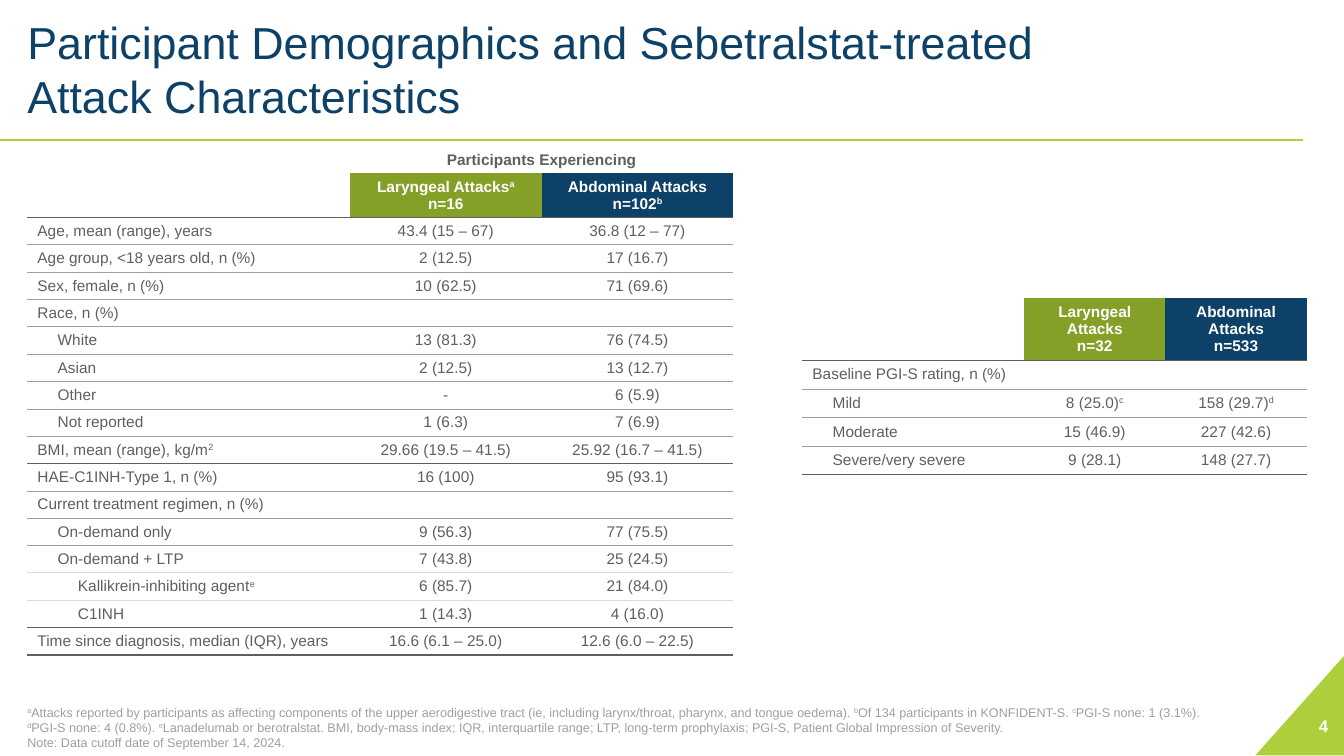
from lxml import etree
from pptx import Presentation
from pptx import util as u
from pptx.dml.color import RGBColor
from pptx.enum import shapes, text
from pptx.oxml import ns

COLOURS = {"navy": "0D4167", "olive": "84A027", "lime": "ADCF3B", "white": "FFFFFF",
           "body": "5F5F5F", "grey": "9F9F9F", "pale": "D9D9D9"}
# Row rules: colour and width in points
RULES = {"thin": ("grey", 0.5), "pale": ("pale", 1), "dark": ("body", 1)}
FONT = "Arial"
NO_GRID_STYLE = "{2D5ABB26-0587-4C30-8999-92F81FD0307C}"
TABLE_SIZE = 11
INDENT = 0.51
LEFT = 0.69

TITLE = "Participant Demographics and Sebetralstat-treated\vAttack Characteristics"
# Text between carets is superscript
FOOTNOTE = (
    "^a^Attacks reported by participants as affecting components of the upper aerodigestive tract "
    "(ie, including larynx/throat, pharynx, and tongue oedema). ^b^Of 134 participants in "
    "KONFIDENT-S. ^c^PGI-S none: 1 (3.1%). \v^d^PGI-S none: 4 (0.8%). ^e^Lanadelumab or "
    "berotralstat. BMI, body-mass index; IQR, interquartile range; LTP, long-term prophylaxis; "
    "PGI-S, Patient Global Impression of Severity.\vNote: Data cutoff date of September 14, 2024.")

# Indent level, label, laryngeal, abdominal, rule below
DEMOGRAPHICS = [
    (0, "Age, mean (range), years", "43.4 (15 – 67)", "36.8 (12 – 77)", "thin"),
    (0, "Age group, <18 years old, n (%)", "2 (12.5)", "17 (16.7)", "thin"),
    (0, "Sex, female, n (%)", "10 (62.5)", "71 (69.6)", "thin"),
    (0, "Race, n (%)", "", "", "thin"),
    (1, "White", "13 (81.3)", "76 (74.5)", "thin"),
    (1, "Asian", "2 (12.5)", "13 (12.7)", "thin"),
    (1, "Other", "-", "6 (5.9)", "thin"),
    (1, "Not reported", "1 (6.3)", "7 (6.9)", "thin"),
    (0, "BMI, mean (range), kg/m^2^", "29.66 (19.5 – 41.5)", "25.92 (16.7 – 41.5)", "dark"),
    (0, "HAE-C1INH-Type 1, n (%)", "16 (100)", "95 (93.1)", "thin"),
    (0, "Current treatment regimen, n (%)", "", "", "thin"),
    (1, "On-demand only", "9 (56.3)", "77 (75.5)", "thin"),
    (1, "On-demand + LTP", "7 (43.8)", "25 (24.5)", "pale"),
    (2, "Kallikrein-inhibiting agent^e^", "6 (85.7)", "21 (84.0)", "pale"),
    (2, "C1INH", "1 (14.3)", "4 (16.0)", "dark"),
    (0, "Time since diagnosis, median (IQR), years", "16.6 (6.1 – 25.0)",
     "12.6 (6.0 – 22.5)", "dark"),
]
SEVERITY = [
    (0, "Baseline PGI-S rating, n (%)", "", "", "thin"),
    (1, "Mild", "8 (25.0)^c^", "158 (29.7)^d^", "thin"),
    (1, "Moderate", "15 (46.9)", "227 (42.6)", "thin"),
    (1, "Severe/very severe", "9 (28.1)", "148 (27.7)", "dark"),
]


def rgb(name):
    return RGBColor.from_string(COLOURS[name])


def add_spans(para, words, size, colour, bold=False):
    for index, part in enumerate(words.split("^")):
        for number, line in enumerate(part.split("\v")):
            if number:
                para.add_line_break()
            if not line:
                continue
            span = para.add_run()
            span.text = line
            span.font.name = FONT
            span.font.size = u.Pt(size)
            span.font.bold = bold
            span.font.color.rgb = rgb(colour)
            if index % 2:
                span.font._element.set("baseline", "30000")


def add_text(page, place, words, size, colour, anchor, bold=False, align=text.PP_ALIGN.LEFT):
    box = page.shapes.add_textbox(*map(u.Cm, place))
    frame = box.text_frame
    frame.word_wrap = True
    frame.vertical_anchor = anchor
    frame.margin_left = frame.margin_right = frame.margin_top = frame.margin_bottom = 0
    frame.paragraphs[0].alignment = align
    add_spans(frame.paragraphs[0], words, size, colour, bold)


def add_rule(page, x1, x2, y):
    line = page.shapes.add_connector(shapes.MSO_CONNECTOR.STRAIGHT,
                                     u.Cm(x1), u.Cm(y), u.Cm(x2), u.Cm(y))
    line.line.color.rgb = rgb("lime")
    line.line.width = u.Pt(2)
    etree.SubElement(line._element.spPr, ns.qn("a:effectLst"))


def add_corner(page):
    corner = page.shapes.add_shape(shapes.MSO_SHAPE.RIGHT_TRIANGLE,
                                   u.Cm(31.5), u.Cm(16.66), u.Cm(2.51), u.Cm(2.24))
    corner.rotation = 270
    corner.shadow.inherit = False
    corner.fill.solid()
    corner.fill.fore_color.rgb = rgb("lime")
    corner.line.fill.background()


def add_border(cell, side, rule):
    colour, width = RULES[rule]
    line = etree.SubElement(cell._tc.get_or_add_tcPr(), ns.qn(f"a:{side}"), w=str(u.Pt(width)))
    fill = etree.SubElement(line, ns.qn("a:solidFill"))
    etree.SubElement(fill, ns.qn("a:srgbClr"), val=COLOURS[colour])


def fill_cell(cell, words, fill, colour="body", bold=False, centred=True, level=0,
              above=None, below=None):
    cell.margin_top = cell.margin_bottom = u.Cm(0.08)
    cell.vertical_anchor = text.MSO_ANCHOR.MIDDLE
    for side, rule in (("lnT", above), ("lnB", below)):
        if rule:
            add_border(cell, side, rule)
    cell.fill.solid()
    cell.fill.fore_color.rgb = rgb(fill)
    for index, line in enumerate(words.split("\n")):
        para = cell.text_frame.add_paragraph() if index else cell.text_frame.paragraphs[0]
        para.alignment = text.PP_ALIGN.CENTER if centred else text.PP_ALIGN.LEFT
        if level:
            para._p.get_or_add_pPr().set("marL", str(u.Cm(INDENT * level)))
        add_spans(para, line, TABLE_SIZE, colour, bold)
        # Keeps empty cells as low as the filled ones
        etree.SubElement(para._p, ns.qn("a:endParaRPr"), sz=str(TABLE_SIZE * 100))


def add_data_table(page, left, top, widths, header_heights, row_height, heads, rows):
    """Build a table whose last header row holds the two attack groups."""
    heights = header_heights + [row_height] * len(rows)
    frame = page.shapes.add_table(len(heights), len(widths), u.Cm(left), u.Cm(top),
                                  u.Cm(sum(widths)), u.Cm(sum(heights)))
    table = frame.table
    table.first_row = table.horz_banding = False
    frame._element.find(".//" + ns.qn("a:tableStyleId")).text = NO_GRID_STYLE
    for column, width in zip(table.columns, widths):
        column.width = u.Cm(width)
    for row, height in zip(table.rows, heights):
        row.height = u.Cm(height)

    # Group heads
    head_row = len(header_heights) - 1
    fill_cell(table.cell(head_row, 0), "", "white", below="dark")
    for column, (words, fill) in enumerate(zip(heads, ("olive", "navy")), 1):
        fill_cell(table.cell(head_row, column), words, fill, "white", True, below="dark")

    # Data rows
    above = "dark"
    for index, (level, label, laryngeal, abdominal, below) in enumerate(rows, head_row + 1):
        fill_cell(table.cell(index, 0), label, "white", centred=False, level=level,
                  above=above, below=below)
        for column, value in enumerate((laryngeal, abdominal), 1):
            fill_cell(table.cell(index, column), value, "white", above=above, below=below)
        above = below
    return table


def main():
    deck = Presentation()
    deck.slide_width, deck.slide_height = u.Cm(33.87), u.Cm(19.05)
    page = deck.slides.add_slide(deck.slide_layouts[6])

    # Frame and title
    add_corner(page)
    add_rule(page, 0, 32.84, 3.53)
    add_text(page, (LEFT, 0.4, 29.92, 2.68), TITLE, 32, "navy", text.MSO_ANCHOR.BOTTOM)
    add_text(page, (32.05, 17.78, 1.42, 1.02), "4", 12, "white", text.MSO_ANCHOR.MIDDLE,
             bold=True, align=text.PP_ALIGN.RIGHT)
    add_text(page, (LEFT, 17.68, 30.94, 1.22), FOOTNOTE, 9, "grey", text.MSO_ANCHOR.BOTTOM)

    # Participant demographics
    people = add_data_table(page, LEFT, 3.68, [8.13, 4.83, 4.83], [0.69, 1.11], 0.69,
                            ["Laryngeal Attacks^a^\nn=16", "Abdominal Attacks\nn=102^b^"],
                            DEMOGRAPHICS)
    fill_cell(people.cell(0, 0), "", "white")
    fill_cell(people.cell(0, 1), "Participants Experiencing", "white", bold=True)
    fill_cell(people.cell(0, 2), "", "white")
    people.cell(0, 0).merge(people.cell(1, 0))
    people.cell(0, 1).merge(people.cell(0, 2))
    add_border_below = people.cell(0, 0)
    add_border_below.fill.background()

    # Attack severity
    add_data_table(page, 20.22, 7.52, [5.59, 3.56, 3.56], [1.55], 0.72,
                   ["Laryngeal Attacks\nn=32", "Abdominal Attacks\nn=533"], SEVERITY)

    deck.save("out.pptx")


if __name__ == "__main__":
    main()
